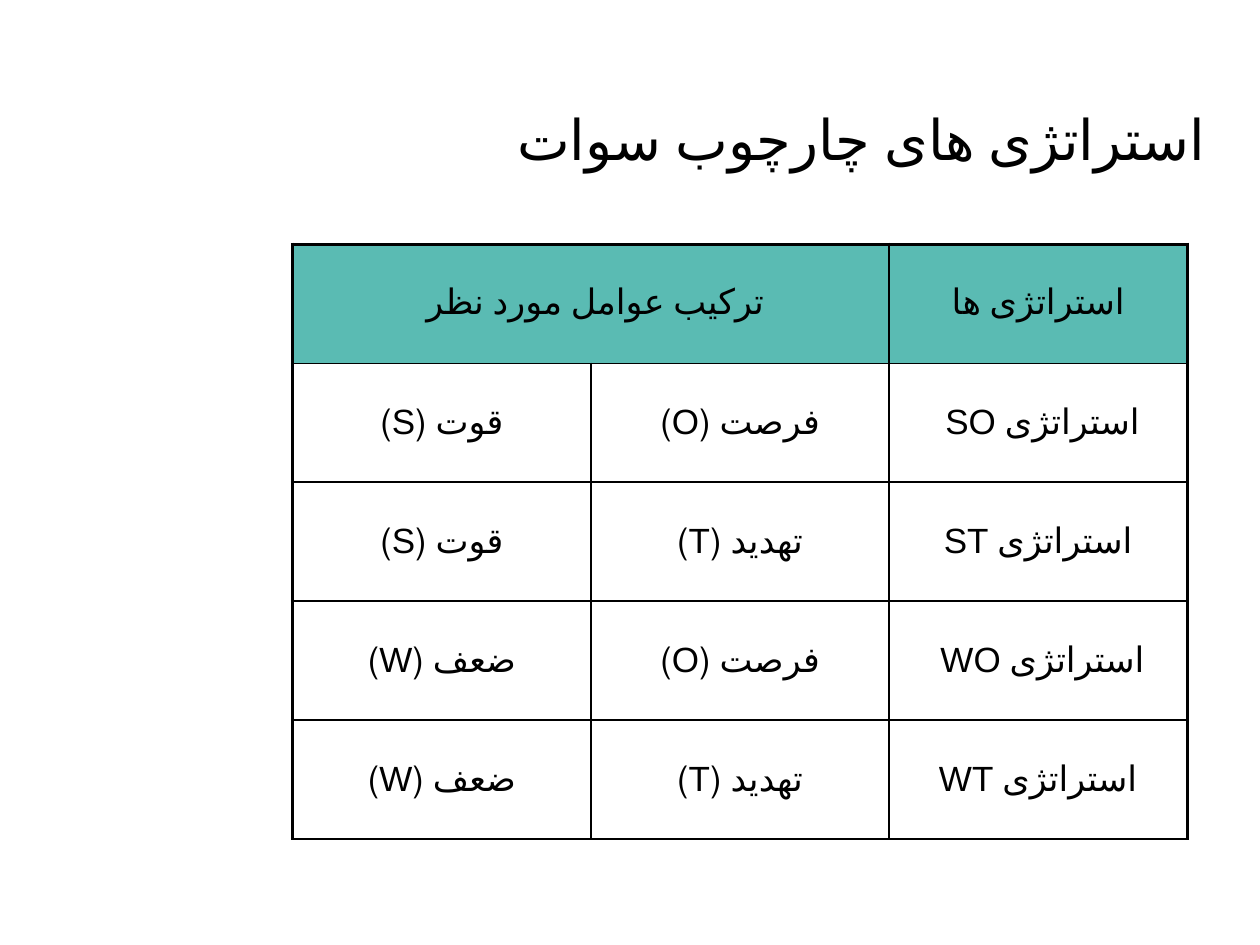
from lxml.etree import SubElement
from pptx import Presentation
from pptx.dml.color import RGBColor
from pptx.enum.lang import MSO_LANGUAGE_ID
from pptx.enum.text import MSO_ANCHOR, PP_ALIGN
from pptx.oxml.ns import qn
from pptx.util import Pt

TITLE = "استراتژی های چارچوب سوات"
ROWS = [
    ("ترکیب عوامل مورد نظر ", "", "استراتژی ها"),
    ("قوت (S)", "فرصت (O)", "استراتژی SO "),
    ("قوت (S)", "تهدید (T)", "استراتژی ST"),
    ("ضعف (W)", "فرصت (O)", "استراتژی WO "),
    ("ضعف (W)", "تهدید (T)", "استراتژی WT"),
]

FONT = "Arial"
BLACK = RGBColor(0x00, 0x00, 0x00)
TEAL = RGBColor(0x5A, 0xBB, 0xB3)
THIN, THICK = Pt(1), Pt(2.25)
COLUMN_WIDTH, ROW_HEIGHT = Pt(170.4), Pt(68)


def write_rtl(frame, text, size, alignment):
    """Fill a text frame with one right-to-left paragraph."""
    frame.word_wrap = True
    para = frame.paragraphs[0]
    para.alignment = alignment
    para._p.get_or_add_pPr().set("rtl", "1")
    span = para.add_run()
    span.text = text
    span.font.size = Pt(size)
    span.font.name = FONT
    span.font.color.rgb = BLACK
    span.font.language_id = MSO_LANGUAGE_ID.FARSI


def set_borders(cell, widths):
    """Draw the borders, with widths keyed by edge in schema order."""
    properties = cell._tc.get_or_add_tcPr()
    for index, (edge, width) in enumerate(widths.items()):
        line = SubElement(properties, qn(f"a:ln{edge}"), w=str(int(width)))
        fill = SubElement(line, qn("a:solidFill"))
        SubElement(fill, qn("a:srgbClr"), val=str(BLACK))
        properties.insert(index, line)


deck = Presentation()
deck.slide_width, deck.slide_height = Pt(720), Pt(540)
page = deck.slides.add_slide(deck.slide_layouts[5])

title = page.shapes.title
title.left, title.top, title.width, title.height = Pt(48), Pt(34), Pt(648), Pt(90)
title.text_frame.vertical_anchor = MSO_ANCHOR.MIDDLE
write_rtl(title.text_frame, TITLE, 32, PP_ALIGN.RIGHT)

row_count, column_count = len(ROWS), len(ROWS[0])
table = page.shapes.add_table(
    row_count, column_count, Pt(167.25), Pt(139.6),
    COLUMN_WIDTH * column_count, ROW_HEIGHT * row_count,
).table
table.first_row = table.horz_banding = False
for column in table.columns:
    column.width = COLUMN_WIDTH
for row in table.rows:
    row.height = ROW_HEIGHT
table.cell(0, 0).merge(table.cell(0, 1))

for row_index, texts in enumerate(ROWS):
    for column_index, text in enumerate(texts):
        cell = table.cell(row_index, column_index)
        if row_index == 0:
            cell.fill.solid()
            cell.fill.fore_color.rgb = TEAL
        else:
            cell.fill.background()
        set_borders(cell, {
            "L": THICK if column_index == 0 else THIN,
            "R": THICK if column_index == column_count - 1 else THIN,
            "T": THICK if row_index == 0 else THIN,
            "B": THIN,
        })
        cell.vertical_anchor = MSO_ANCHOR.MIDDLE
        if text:
            write_rtl(cell.text_frame, text, 20, PP_ALIGN.CENTER)

deck.save("out.pptx")
